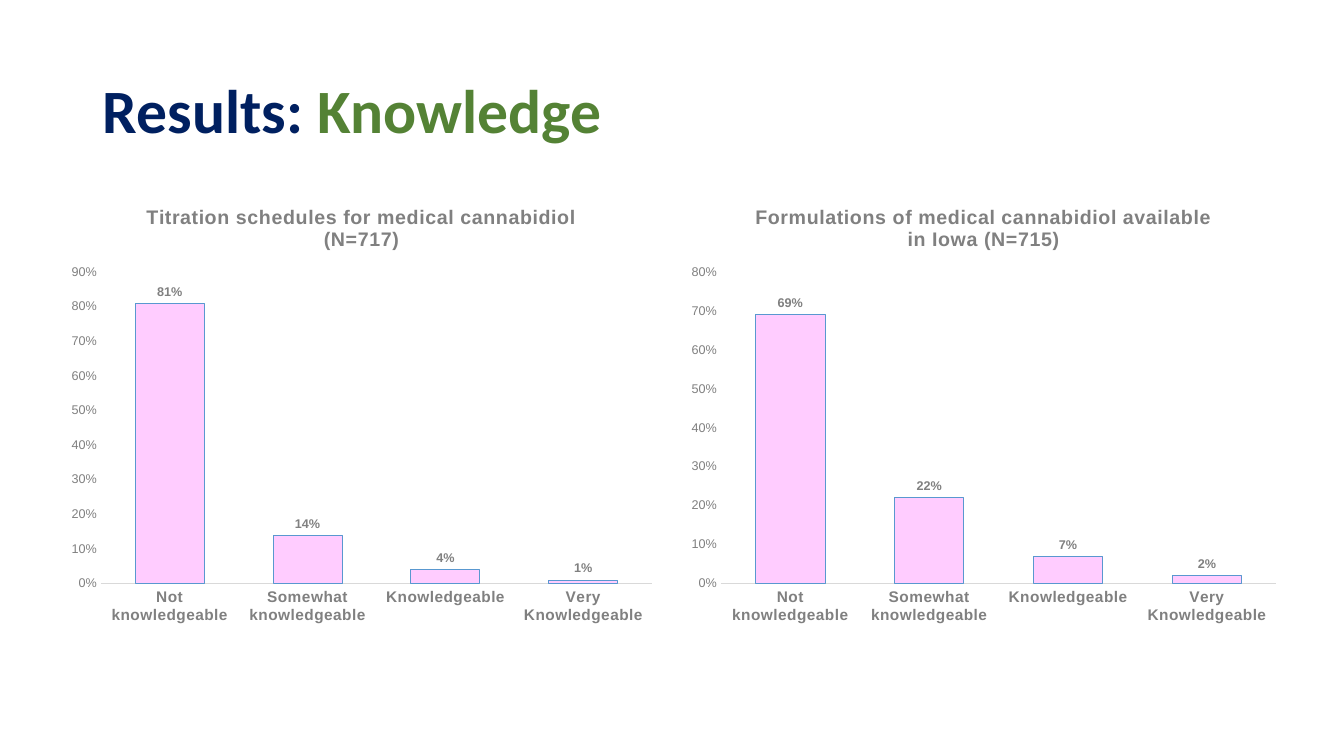
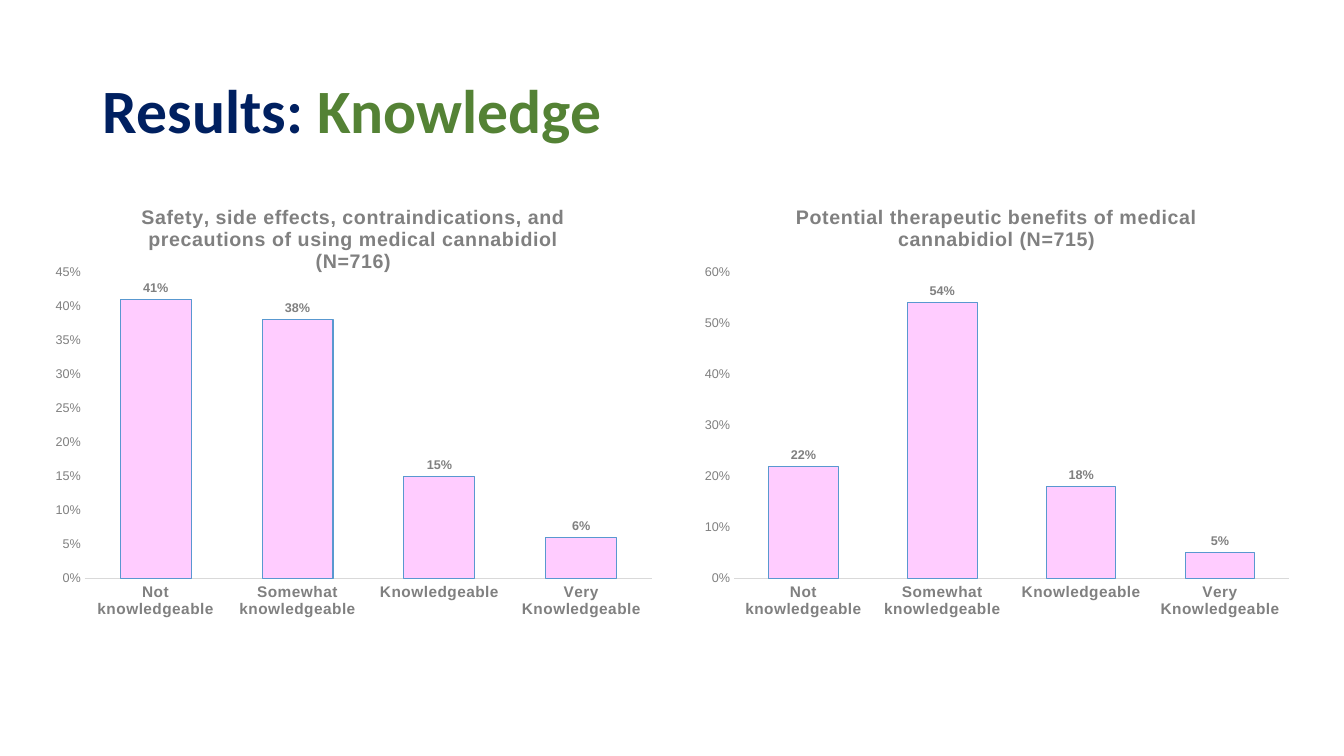
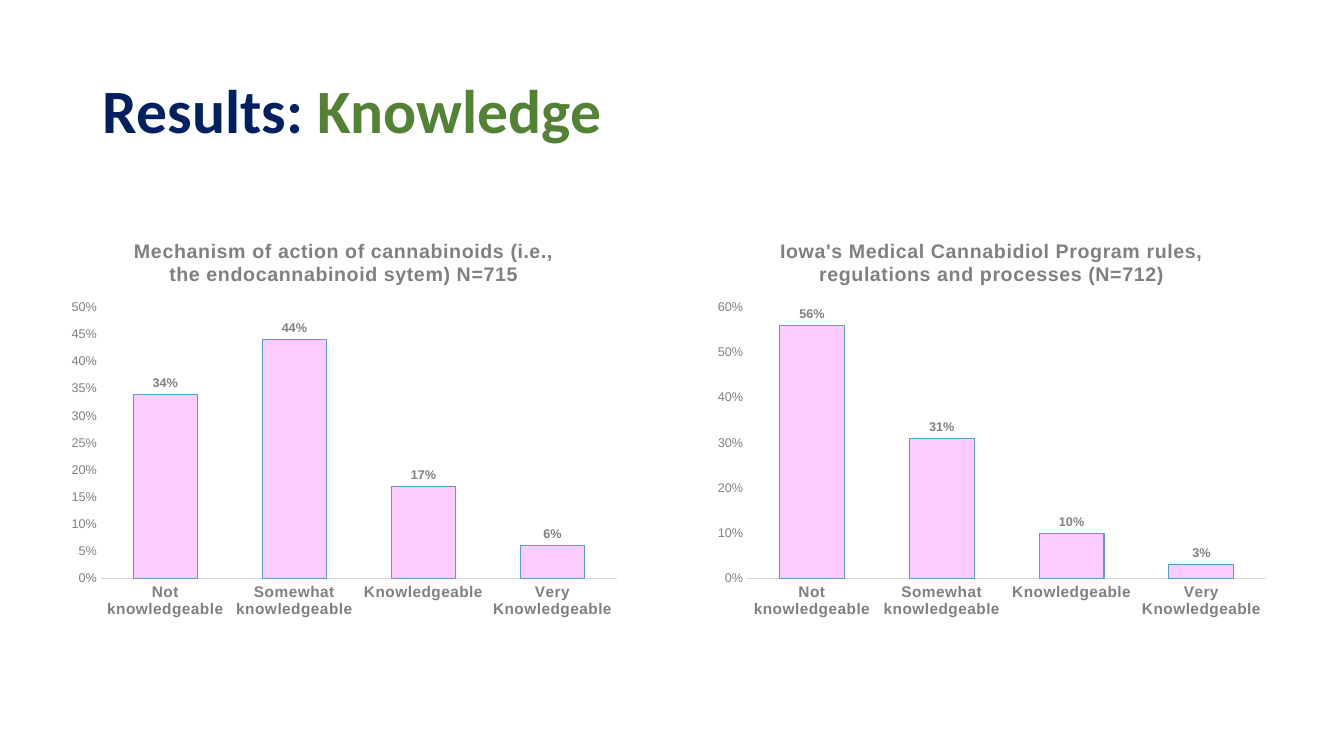
from pptx import Presentation
from pptx.chart.data import CategoryChartData
from pptx.dml.color import RGBColor
from pptx.enum.chart import XL_CHART_TYPE as ChartType
from pptx.enum.chart import XL_LABEL_POSITION as LabelPosition
from pptx.enum.chart import XL_TICK_MARK as TickMark
from pptx.enum.text import MSO_ANCHOR as Anchor
from pptx.enum.text import MSO_AUTO_SIZE as AutoSize
from pptx.enum.text import PP_ALIGN as Align
from pptx.oxml import parse_xml
from pptx.oxml.ns import nsdecls, qn
from pptx.util import Inches, Pt

COLORS = {
    "navy": "002060",
    "green": "548235",
    "gray": "808080",
    "axis": "D9D9D9",
    "bar": "FFCCFF",
    "bar_line": "5998D0",
    "black": "000000",
}
TITLE_FONT = "Calibri"
CHART_FONT = "Arial"
TITLE_RUNS = [("Results: ", "navy"), ("Knowledge", "green")]
LEVELS = ["Not knowledgeable", "Somewhat knowledgeable", "Knowledgeable", "Very Knowledgeable"]
PLOT_MARGINS = {"left": 0.41, "top": 0.85, "right": 0.11, "bottom": 0.49}

SLIDES = [
    [
        {"title": "Titration schedules for medical cannabidiol (N=717)",
         "box": (0.59, 1.85, 5.99, 4.43), "values": (0.81, 0.14, 0.04, 0.01),
         "maximum": 0.9, "step": 0.1},
        {"title": "Formulations of medical cannabidiol available in Iowa (N=715)",
         "box": (6.74, 1.85, 6.03, 4.43), "values": (0.69, 0.22, 0.07, 0.02),
         "maximum": 0.8, "step": 0.1},
    ],
    [
        {"title": "Safety, side effects, contraindications, and precautions of using "
                  "medical cannabidiol (N=716)",
         "box": (0.43, 1.85, 6.15, 4.38), "values": (0.41, 0.38, 0.15, 0.06),
         "maximum": 0.45, "step": 0.05},
        {"title": "Potential therapeutic benefits of medical cannabidiol (N=715)",
         "box": (6.87, 1.85, 6.03, 4.38), "values": (0.22, 0.54, 0.18, 0.05),
         "maximum": 0.6, "step": 0.1},
    ],
    [
        {"title": "Mechanism of action of cannabinoids (i.e., the endocannabinoid sytem) N=715",
         "box": (0.59, 2.2, 5.64, 4.03), "values": (0.34, 0.44, 0.17, 0.06),
         "maximum": 0.5, "step": 0.05},
        {"title": "Iowa's Medical Cannabidiol Program rules, regulations and processes (N=712)",
         "box": (7, 2.2, 5.67, 4.03), "values": (0.56, 0.31, 0.1, 0.03),
         "maximum": 0.6, "step": 0.1},
    ],
]


def color(name):
    return RGBColor.from_string(COLORS[name])


def format_font(font, name, size, color_name, bold=False):
    font.name = name
    font.size = Pt(size)
    font.bold = bold
    font.color.rgb = color(color_name)


def format_line(line, color_name):
    line.color.rgb = color(color_name)
    line.width = Pt(0.75)


def set_letter_spacing(chart, container, properties, spacing):
    for element in chart.element.iter(qn(container)):
        for run_properties in element.iter(qn(properties)):
            run_properties.set("spc", str(spacing))


def set_plot_layout(chart, width, height):
    margins = PLOT_MARGINS
    fractions = {
        "x": margins["left"] / width,
        "y": margins["top"] / height,
        "w": 1 - (margins["left"] + margins["right"]) / width,
        "h": 1 - (margins["top"] + margins["bottom"]) / height,
    }
    sizes = "".join(f'<c:{key} val="{value:.4f}"/>' for key, value in fractions.items())
    layout = parse_xml(
        f'<c:layout {nsdecls("c")}><c:manualLayout><c:layoutTarget val="inner"/>'
        f'<c:xMode val="edge"/><c:yMode val="edge"/>{sizes}</c:manualLayout></c:layout>'
    )
    plot_area = next(chart.element.iter(qn("c:plotArea")))
    for old_layout in plot_area.findall(qn("c:layout")):
        plot_area.remove(old_layout)
    plot_area.insert(0, layout)


def add_title(slide):
    title = slide.shapes.title
    title.left, title.top = Inches(0.92), Inches(0.4)
    title.width, title.height = Inches(11.5), Inches(1.45)
    frame = title.text_frame
    frame.word_wrap = True
    frame.auto_size = AutoSize.NONE
    frame.vertical_anchor = Anchor.MIDDLE
    paragraph = frame.paragraphs[0]
    paragraph.alignment = Align.LEFT
    paragraph.line_spacing = 0.9
    for text, color_name in TITLE_RUNS:
        run = paragraph.add_run()
        run.text = text
        format_font(run.font, TITLE_FONT, 44, color_name, bold=True)


def format_chart_title(chart, text):
    chart.has_title = True
    chart.chart_title.include_in_layout = False
    run = chart.chart_title.text_frame.paragraphs[0].add_run()
    run.text = text
    format_font(run.font, CHART_FONT, 14, "gray", bold=True)
    set_letter_spacing(chart, "c:title", "a:rPr", 30)


def format_axes(chart, maximum, step):
    category_axis, value_axis = chart.category_axis, chart.value_axis
    for axis in (category_axis, value_axis):
        axis.has_major_gridlines = False
        axis.major_tick_mark = axis.minor_tick_mark = TickMark.NONE
    format_font(category_axis.tick_labels.font, CHART_FONT, 11, "gray", bold=True)
    set_letter_spacing(chart, "c:catAx", "a:defRPr", 20)
    format_line(category_axis.format.line, "axis")
    format_font(value_axis.tick_labels.font, CHART_FONT, 9, "gray")
    value_axis.tick_labels.number_format = "0%"
    value_axis.tick_labels.number_format_is_linked = False
    value_axis.format.line.fill.background()
    value_axis.minimum_scale = 0
    value_axis.maximum_scale = maximum
    value_axis.major_unit = step


def format_bars(plot):
    plot.gap_width = 100
    plot.overlap = -24
    plot.vary_by_categories = False
    series = plot.series[0]
    series.format.fill.solid()
    series.format.fill.fore_color.rgb = color("bar")
    format_line(series.format.line, "bar_line")
    plot.has_data_labels = True
    labels = plot.data_labels
    labels.show_value = True
    labels.position = LabelPosition.OUTSIDE_END
    labels.number_format = "0%"
    labels.number_format_is_linked = False
    format_font(labels.font, CHART_FONT, 9, "gray", bold=True)


def add_bar_chart(slide, title, box, values, maximum, step):
    data = CategoryChartData(number_format="0%")
    data.categories = LEVELS
    data.add_series("Series 1", values)
    position = [Inches(length) for length in box]
    chart = slide.shapes.add_chart(ChartType.COLUMN_CLUSTERED, *position, data).chart
    format_font(chart.font, CHART_FONT, 10, "black")
    chart.has_legend = False
    format_chart_title(chart, title)
    format_axes(chart, maximum, step)
    format_bars(chart.plots[0])
    set_plot_layout(chart, *box[2:])


def main():
    presentation = Presentation()
    presentation.slide_width = Inches(13.33)
    presentation.slide_height = Inches(7.5)
    title_only = presentation.slide_layouts[5]
    for charts in SLIDES:
        slide = presentation.slides.add_slide(title_only)
        add_title(slide)
        for chart in charts:
            add_bar_chart(slide, **chart)
    presentation.save("out.pptx")


if __name__ == "__main__":
    main()
